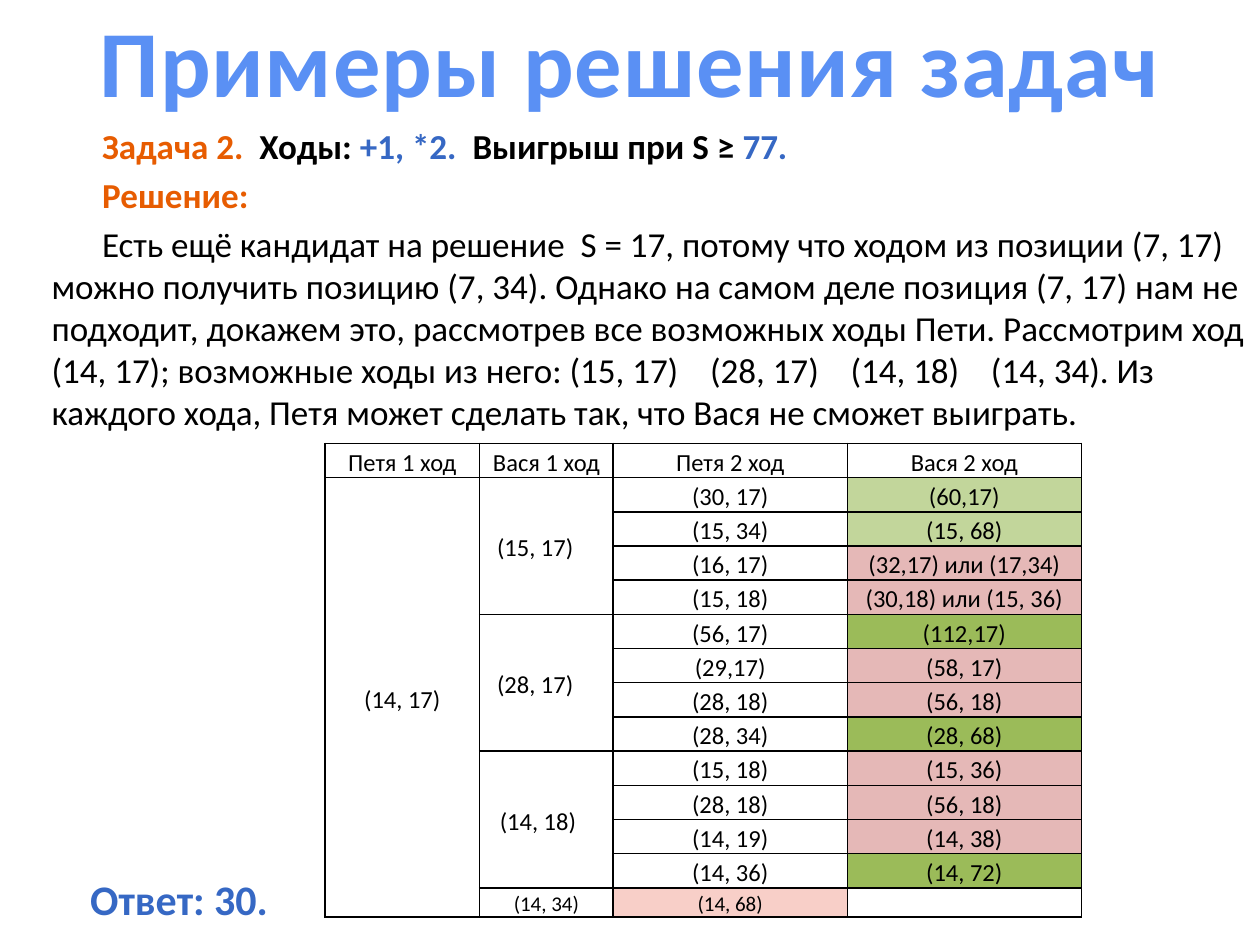
import dataclasses

import lxml.etree
import pptx
import pptx.dml.color
import pptx.enum.text
import pptx.oxml.ns
import pptx.util

Cm = pptx.util.Cm
Pt = pptx.util.Pt
FONT = "Calibri"
BLACK, WHITE = "000000", "FFFFFF"
ORANGE, BLUE, TITLE_BLUE = "E75C01", "3668C4", "5A90F4"
LIGHT_GREEN, GREEN = "C2D69B", "9BBB59"
PINK, PALE_PINK = "E5B8B7", "F8CFC8"


@dataclasses.dataclass
class Piece:
    text: str
    color: str = BLACK
    bold: bool = False


@dataclasses.dataclass
class Reply:
    petya: str
    vasya: str
    fill: str


@dataclasses.dataclass
class Move:
    position: str
    replies: list[Reply]
    right_gap: float = 0.45


INTRO = [
    [
        Piece("Задача 2.  ", ORANGE, True),
        Piece("Ходы: ", BLACK, True),
        Piece("+1, *2.  ", BLUE, True),
        Piece("Выигрыш при S ≥ ", BLACK, True),
        Piece("77.", BLUE, True),
    ],
    [Piece("Решение:", ORANGE, True)],
    [Piece(
        "Есть ещё кандидат на решение  S = 17, потому что ходом из позиции (7, 17) "
        "можно получить позицию (7, 34). Однако на самом деле позиция (7, 17) нам не "
        "подходит, докажем это, рассмотрев все возможных ходы Пети. Рассмотрим ход "
        "(14, 17); возможные ходы из него: (15, 17)    (28, 17)    (14, 18)    (14, 34). "
        "Из каждого хода, Петя может сделать так, что Вася не сможет выиграть."
    )],
]
HEADERS = ["Петя 1 ход", "Вася 1 ход", "Петя 2 ход", "Вася 2 ход"]
MOVES = [
    Move("(15, 17)", [
        Reply("(30, 17)", "(60,17)", LIGHT_GREEN),
        Reply("(15, 34)", "(15, 68)", LIGHT_GREEN),
        Reply("(16, 17)", "(32,17) или (17,34)", PINK),
        Reply("(15, 18)", "(30,18) или (15, 36)", PINK),
    ]),
    Move("(28, 17)", [
        Reply("(56, 17)", "(112,17)", GREEN),
        Reply("(29,17)", "(58, 17)", PINK),
        Reply("(28, 18)", "(56, 18)", PINK),
        Reply("(28, 34)", "(28, 68)", GREEN),
    ]),
    Move("(14, 18)", [
        Reply("(15, 18)", "(15, 36)", PINK),
        Reply("(28, 18)", "(56, 18)", PINK),
        Reply("(14, 19)", "(14, 38)", PINK),
        Reply("(14, 36)", "(14, 72)", GREEN),
    ], 0.34),
]
COLUMN_WIDTHS = [3.12, 2.69, 4.72, 4.72]
ROW_HEIGHT, LAST_ROW_HEIGHT = 0.69, 0.59


def rgb(color: str) -> pptx.dml.color.RGBColor:
    return pptx.dml.color.RGBColor.from_string(color)


def set_font(font, size: float, color: str, bold: bool = False) -> None:
    font.name, font.size, font.bold = FONT, Pt(size), bold
    font.color.rgb = rgb(color)


def add_borders(cell) -> None:
    properties = cell._tc.get_or_add_tcPr()
    for position, side in enumerate(("a:lnL", "a:lnR", "a:lnT", "a:lnB")):
        line = lxml.etree.Element(pptx.oxml.ns.qn(side), w=str(Pt(1)))
        fill = lxml.etree.SubElement(line, pptx.oxml.ns.qn("a:solidFill"))
        lxml.etree.SubElement(fill, pptx.oxml.ns.qn("a:srgbClr"), val=BLACK)
        properties.insert(position, line)


def format_cell(cell, size: float) -> None:
    cell.fill.solid()
    cell.fill.fore_color.rgb = rgb(WHITE)
    cell.margin_left = cell.margin_right = Cm(0.13)
    cell.margin_top = cell.margin_bottom = 0
    cell.vertical_anchor = pptx.enum.text.MSO_ANCHOR.MIDDLE
    paragraph = cell.text_frame.paragraphs[0]
    paragraph.alignment = pptx.enum.text.PP_ALIGN.CENTER
    paragraph.line_spacing = 1.15
    set_font(paragraph.font, size, BLACK)
    add_borders(cell)


def write_cell(cell, text: str, fill: str = WHITE, right_gap: float = 0) -> None:
    cell.text_frame.paragraphs[0].add_run().text = text
    cell.fill.fore_color.rgb = rgb(fill)
    cell.margin_right += Cm(right_gap)


def add_title(slide) -> None:
    title = slide.shapes.title
    title.left, title.top, title.width, title.height = Cm(1.27), 0, Cm(22.86), Cm(2.39)
    title.text_frame.vertical_anchor = pptx.enum.text.MSO_ANCHOR.MIDDLE
    paragraph = title.text_frame.paragraphs[0]
    paragraph.alignment = pptx.enum.text.PP_ALIGN.CENTER
    run = paragraph.add_run()
    run.text = "Примеры решения задач"
    set_font(run.font, 54, TITLE_BLUE, True)
    run._r.get_or_add_rPr().set("spc", "50")


def add_intro(slide) -> None:
    box = slide.shapes.add_textbox(Cm(0.79), Cm(2.39), Cm(24.61), Cm(6.55))
    frame = box.text_frame
    frame.word_wrap = True
    for index, pieces in enumerate(INTRO):
        paragraph = frame.add_paragraph() if index else frame.paragraphs[0]
        paragraph.space_before = Pt(4)
        paragraph._p.get_or_add_pPr().set("indent", str(Cm(1.02)))
        for piece in pieces:
            run = paragraph.add_run()
            run.text = piece.text
            set_font(run.font, 20, piece.color, piece.bold)


def add_game_table(slide) -> None:
    row_count = 2 + sum(len(move.replies) for move in MOVES)
    last = row_count - 1
    height = ROW_HEIGHT * last + LAST_ROW_HEIGHT
    table = slide.shapes.add_table(
        row_count, len(HEADERS), Cm(6.55), Cm(8.94), Cm(sum(COLUMN_WIDTHS)), Cm(height)
    ).table
    table.first_row = table.horz_banding = False
    for column, width in zip(table.columns, COLUMN_WIDTHS):
        column.width = Cm(width)
    for index, row in enumerate(table.rows):
        row.height = Cm(LAST_ROW_HEIGHT if index == last else ROW_HEIGHT)
        for cell in row.cells:
            format_cell(cell, 12 if index == last else 14)

    # Header and the first move, which spans all rows below it
    for index, header in enumerate(HEADERS):
        write_cell(table.cell(0, index), header)
    write_cell(table.cell(1, 0), "(14, 17)")
    table.cell(1, 0).merge(table.cell(last, 0))

    # Each reply by Vasya with the moves that follow
    top = 1
    for move in MOVES:
        write_cell(table.cell(top, 1), move.position, right_gap=move.right_gap)
        table.cell(top, 1).merge(table.cell(top + len(move.replies) - 1, 1))
        for row, reply in enumerate(move.replies, top):
            write_cell(table.cell(row, 2), reply.petya)
            write_cell(table.cell(row, 3), reply.vasya, reply.fill)
        top += len(move.replies)
    write_cell(table.cell(last, 1), "(14, 34)")
    write_cell(table.cell(last, 2), "(14, 68)", PALE_PINK)


def add_answer(slide) -> None:
    box = slide.shapes.add_textbox(Cm(1.57), Cm(17.48), Cm(4.15), Cm(1.27))
    box.text_frame.word_wrap = False
    run = box.text_frame.paragraphs[0].add_run()
    run.text = "Ответ: 30."
    set_font(run.font, 24, BLUE, True)


def main() -> None:
    presentation = pptx.Presentation()
    presentation.slide_width, presentation.slide_height = Cm(25.4), Cm(19.05)
    slide = presentation.slides.add_slide(presentation.slide_layouts[5])
    add_title(slide)
    add_intro(slide)
    add_game_table(slide)
    add_answer(slide)
    presentation.save("out.pptx")


if __name__ == "__main__":
    main()
